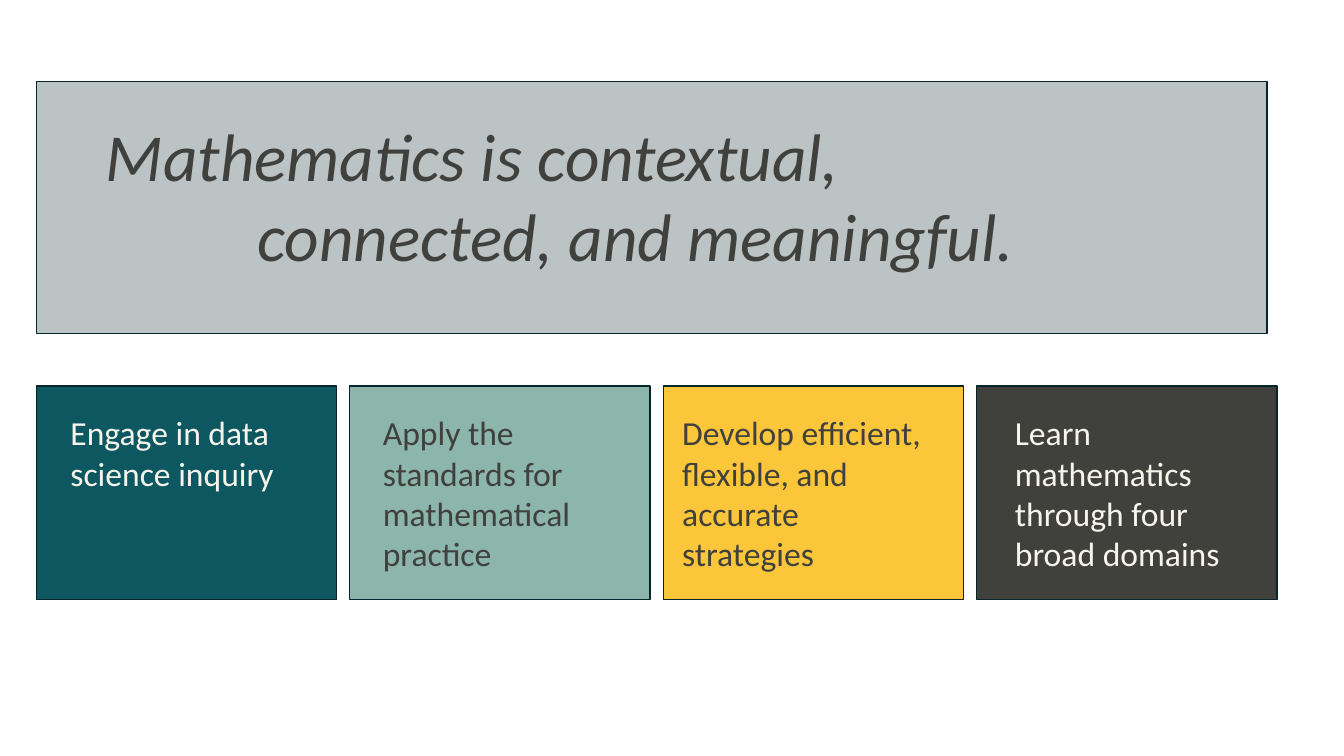
import pptx
import pptx.util
import pptx.dml.color
import pptx.enum.shapes
import pptx.enum.text

Pt = pptx.util.Pt
RGBColor = pptx.dml.color.RGBColor

GREY = RGBColor(0xBC, 0xC3, 0xC5)
TEAL = RGBColor(0x0D, 0x57, 0x61)
SAGE = RGBColor(0x8C, 0xB5, 0xAB)
YELLOW = RGBColor(0xFB, 0xC6, 0x39)
CHARCOAL = RGBColor(0x40, 0x40, 0x3D)
CREAM = RGBColor(0xF7, 0xF5, 0xEB)
OUTLINE = RGBColor(0x06, 0x26, 0x2B)

LEFT = 25.92
CARD_TOP, CARD_W, CARD_H, CARD_PITCH = 275.76, 214.56, 152.64, 223.92
LABEL_TOP = 290.88
SECOND_LINE_INDENT = 108.5

prs = pptx.Presentation()
prs.slide_width, prs.slide_height = Pt(960), Pt(540)
s = prs.slides.add_slide(prs.slide_layouts[6])


def add_panel(x, y, w, h, color):
    sp = s.shapes.add_shape(pptx.enum.shapes.MSO_SHAPE.RECTANGLE,
                            Pt(x), Pt(y), Pt(w), Pt(h))
    sp.shadow.inherit = False
    sp.fill.solid()
    sp.fill.fore_color.rgb = color
    sp.line.color.rgb = OUTLINE
    sp.line.width = Pt(1)


def add_text(x, y, w, h, lines, color, font):
    tf = s.shapes.add_textbox(Pt(x), Pt(y), Pt(w), Pt(h)).text_frame
    tf.word_wrap = True
    tf.vertical_anchor = pptx.enum.text.MSO_ANCHOR.TOP
    for i, line in enumerate(lines):
        p = tf.paragraphs[0] if i == 0 else tf.add_paragraph()
        r = p.add_run()
        r.text = line
        for name, value in font.items():
            setattr(r.font, name, value)
        r.font.color.rgb = color
    return tf


# Headline banner, second line indented
add_panel(LEFT, 58.32, 879.12, 180, GREY)
tf = add_text(68.4, 77.76, 843.12, 172.08,
              ["Mathematics is contextual,", "connected, and meaningful."],
              CHARCOAL, {"name": "Calibri", "size": Pt(48), "italic": True})
tf.paragraphs[1]._p.get_or_add_pPr().set("marL", str(Pt(SECOND_LINE_INDENT)))

# Four cards: fill, text colour, label left, width and height, wording
cards = [
    (TEAL, CREAM, 43.2, 186.48, 66.24, "Engage in data science inquiry"),
    (SAGE, CHARCOAL, 266.4, 200.16, 123.84,
     "Apply the standards for mathematical practice"),
    (YELLOW, CHARCOAL, 480.24, 194.4, 123.84,
     "Develop efficient, flexible, and accurate strategies"),
    (CHARCOAL, CREAM, 717.84, 186.48, 123.84,
     "Learn mathematics through four broad domains"),
]
for i, (fill, color, x, w, h, label) in enumerate(cards):
    add_panel(LEFT + i * CARD_PITCH, CARD_TOP, CARD_W, CARD_H, fill)
    add_text(x, LABEL_TOP, w, h, [label], color,
             {"name": "Calibri", "size": Pt(24)})

prs.save("out.pptx")
